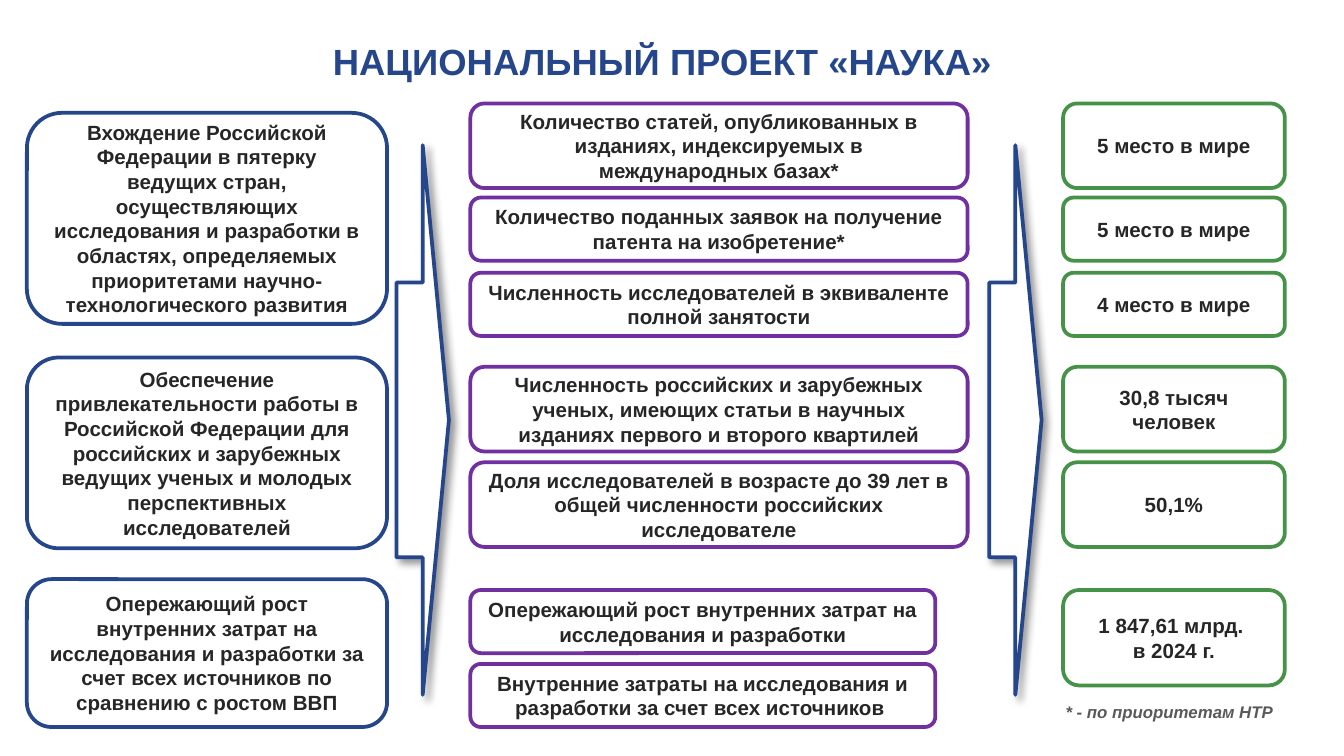
from lxml import etree
from pptx import Presentation
from pptx.dml.color import RGBColor
from pptx.enum.shapes import MSO_SHAPE as Shape
from pptx.enum.text import MSO_ANCHOR as Anchor, MSO_AUTO_SIZE as Fit, PP_ALIGN as Align
from pptx.oxml.ns import qn
from pptx.util import Inches, Pt

COLORS = {"blue": "25468A", "purple": "7030A0", "green": "479249",
          "text": "262626", "note": "595959", "white": "FFFFFF", "shade": "000000"}
BODY = {"name": "Arial", "size": Pt(11), "bold": True}
TITLE = {**BODY, "size": Pt(19.5)}
NOTE = {**BODY, "size": Pt(9), "italic": True}

GOALS = [
    (0.84, 1.57, "Вхождение Российской Федерации в пятерку ведущих стран, осуществляющих "
     "исследования и разработки в областях, определяемых приоритетами "
     "научно-технологического развития"),
    (2.66, 1.42, "Обеспечение привлекательности работы в Российской Федерации для российских "
     "и зарубежных ведущих ученых и молодых перспективных исследователей"),
    (4.31, 1.1, "Опережающий рост внутренних затрат на исследования и разработки за счет "
     "всех источников по сравнению с ростом ВВП"),
]
# top, height, measure, target
ROWS = [
    (0.77, 0.63, "Количество статей, опубликованных в изданиях, индексируемых "
     "в международных базах*", "5 место в мире"),
    (1.47, 0.47, "Количество поданных заявок на получение патента на изобретение*",
     "5 место в мире"),
    (2.03, 0.47, "Численность исследователей в эквиваленте полной занятости",
     "4 место в мире"),
    (2.73, 0.63, "Численность российских и зарубежных ученых, имеющих статьи "
     "в научных изданиях первого и второго квартилей", "30,8 тысяч человек"),
    (3.44, 0.63, "Доля исследователей в возрасте до 39 лет в общей численности "
     "российских исследователе", "50,1%"),
]
COSTS = [
    (4.39, "Опережающий рост внутренних затрат на исследования и разработки"),
    (4.94, "Внутренние затраты на исследования и разработки за счет всех источников "),
]


def rgb(key):
    return RGBColor.from_string(COLORS[key])


def write(frame, text, color, style, align=Align.CENTER):
    """Fill a text frame, one paragraph per line of text."""
    frame.text = text
    for para in frame.paragraphs:
        para.alignment = align
        for key, value in style.items():
            setattr(para.font, key, value)
        para.font.color.rgb = rgb(color)


def add_form(slide, kind, area, color):
    """Add a white shape with a coloured outline."""
    form = slide.shapes.add_shape(kind, *map(Inches, area))
    form.shadow.inherit = False
    form.fill.solid()
    form.fill.fore_color.rgb = rgb("white")
    form.line.color.rgb = rgb(color)
    form.line.width = Pt(2)
    return form


def add_box(slide, area, text, color):
    frame = add_form(slide, Shape.ROUNDED_RECTANGLE, area, color).text_frame
    frame.word_wrap = True
    frame.vertical_anchor = Anchor.MIDDLE
    write(frame, text, "text", BODY)


def add_arrow(slide, left):
    """Add a block arrow with a soft shadow."""
    arrow = add_form(slide, Shape.RIGHT_ARROW, (left, 1.08, 0.39, 4.09), "blue")
    effects = arrow.element.spPr.find(qn("a:effectLst"))
    shade = etree.SubElement(effects, qn("a:outerShdw"), blurRad=str(Pt(4)),
                             dist=str(Pt(3)), dir=str(45 * 60000), algn="tl",
                             rotWithShape="0")
    tint = etree.SubElement(shade, qn("a:srgbClr"), val=COLORS["shade"])
    etree.SubElement(tint, qn("a:alpha"), val="40000")


def add_text(slide, area, text, color, style, align, wrap):
    frame = slide.shapes.add_textbox(*map(Inches, area)).text_frame
    frame.word_wrap = wrap
    write(frame, text, color, style, align)
    return frame


def main():
    deck = Presentation()
    deck.slide_width = Inches(10)
    deck.slide_height = deck.slide_width * 9 // 16
    slide = deck.slides.add_slide(deck.slide_layouts[6])

    for top, height, goal in GOALS:
        add_box(slide, (0.2, top, 2.68, height), goal, "blue")
    for left in (2.95, 7.36):
        add_arrow(slide, left)
    for top, height, measure, target in ROWS:
        add_box(slide, (3.5, top, 3.7, height), measure, "purple")
        add_box(slide, (7.91, top, 1.65, height), target, "green")
    for top, cost in COSTS:
        add_box(slide, (3.5, top, 3.46, 0.47), cost, "purple")
    add_box(slide, (7.91, 4.39, 1.65, 0.71), "1 847,61 млрд. \nв 2024 г.", "green")

    note = add_text(slide, (7.83, 5.17, 1.76, 0.25), "* - по приоритетам НТР",
                    "note", NOTE, Align.LEFT, False)
    note.auto_size = Fit.SHAPE_TO_FIT_TEXT
    title = add_text(slide, (0.43, 0.14, 9, 0.63), "НАЦИОНАЛЬНЫЙ ПРОЕКТ «НАУКА»",
                     "blue", TITLE, Align.CENTER, True)
    title.vertical_anchor = Anchor.MIDDLE
    deck.save("out.pptx")


if __name__ == "__main__":
    main()
